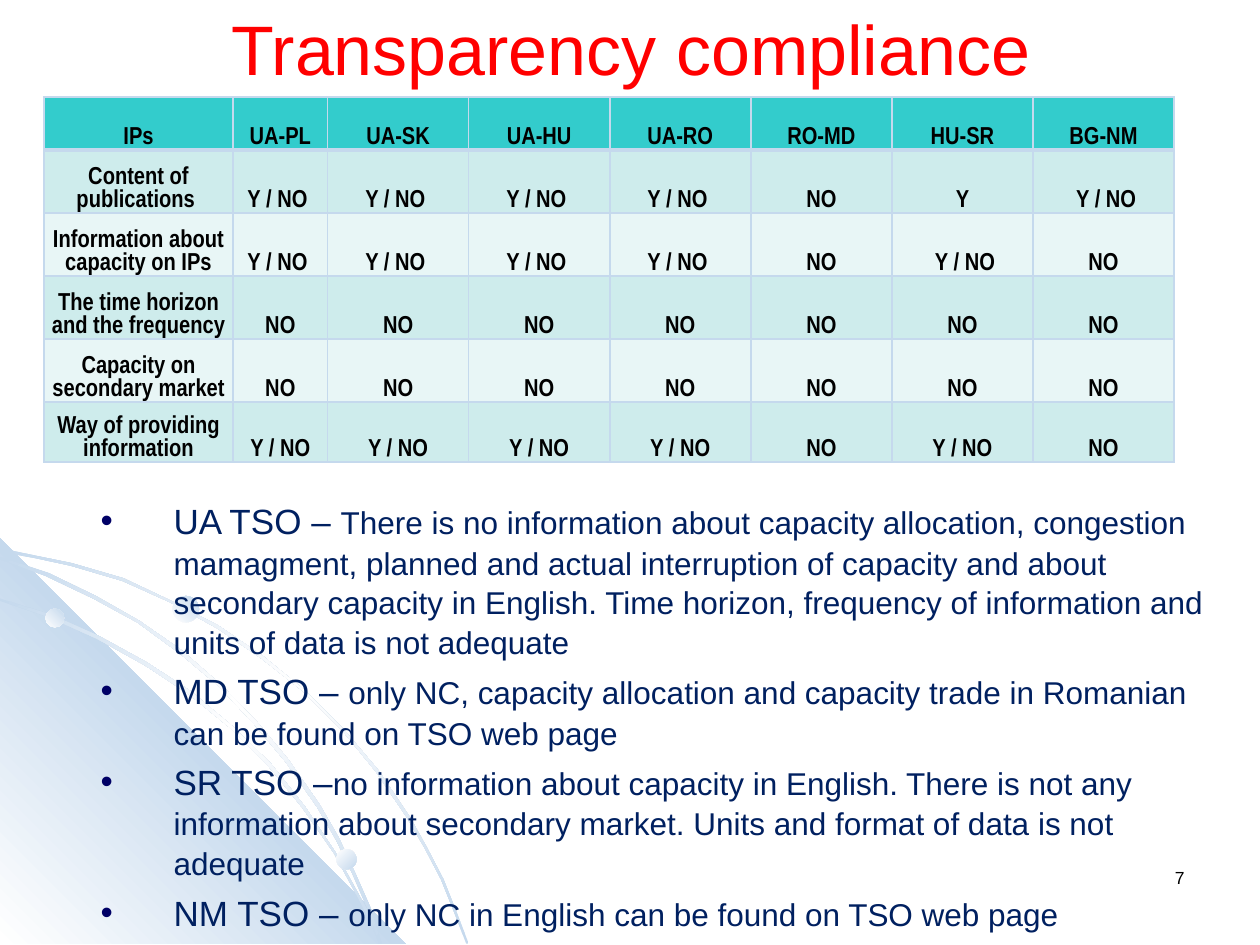
from dataclasses import dataclass

from lxml.etree import SubElement
from pptx import Presentation
from pptx.dml.color import RGBColor
from pptx.enum.shapes import MSO_SHAPE as Preset
from pptx.enum.text import MSO_ANCHOR as Anchor, PP_ALIGN as Align
from pptx.oxml.ns import qn
from pptx.util import Inches, Pt

COLORS = {
    "title": "FF0000", "text": "002060", "bullet": "000066", "black": "000000",
    "white": "FFFFFF", "mist": "C5D9ED", "header": "33CCCC",
    "odd": "CEECEC", "even": "E8F6F6",
}
SHEEN = ("mist", "white", "mist")
GLOW = ("white", "mist", "white")
PEARL = ("white", "mist")


@dataclass(frozen=True)
class Outline:
    points: tuple
    stops: tuple
    angle: int


@dataclass(frozen=True)
class Bead:
    left: float
    top: float
    size: float
    angle: int


@dataclass(frozen=True)
class Finding:
    operator: str
    remark: str


OUTLINES = [
    Outline((
        (0.57, 4.47), (0.28, 4.41), (0, 4.35), (0, 4.38), (0.28, 4.43), (0.56, 4.49),
        (0.97, 4.61), (1.35, 4.78), (1.73, 4.99), (2.08, 5.23), (2.41, 5.49), (2.71, 5.79),
        (2.98, 6.12), (3.23, 6.49), (3.37, 6.73), (3.5, 6.98), (3.6, 7.23), (3.7, 7.49),
        (3.72, 7.49), (3.62, 7.23), (3.52, 6.98), (3.39, 6.73), (3.25, 6.48), (3, 6.11),
        (2.72, 5.78), (2.42, 5.48), (2.09, 5.21), (1.74, 4.97), (1.36, 4.77), (0.98, 4.59),
    ), SHEEN, 45),
    Outline(((3.22, 7.49), (0, 7.49), (0, 4.27)), GLOW, 315),
    Outline((
        (2.85, 7.14), (2.94, 7.32), (3.01, 7.49), (3.03, 7.49), (2.96, 7.3), (2.86, 7.12),
        (2.66, 6.76), (2.42, 6.4), (2.15, 6.06), (1.84, 5.76), (1.52, 5.49), (1.17, 5.26),
        (0.79, 5.05), (0.41, 4.88), (0, 4.75), (0, 4.77), (0.39, 4.9), (0.77, 5.07),
        (1.15, 5.28), (1.5, 5.51), (1.83, 5.78), (2.13, 6.08), (2.4, 6.41), (2.65, 6.77),
    ), SHEEN, 45),
    Outline((
        (0, 4.42), (0, 4.44), (0.36, 4.57), (0.74, 4.75), (1.09, 4.94), (1.42, 5.18),
        (1.73, 5.44), (2.02, 5.75), (2.27, 6.05), (2.52, 6.41), (2.67, 6.67), (2.8, 6.94),
        (2.92, 7.22), (3.01, 7.49), (3.03, 7.49), (2.94, 7.2), (2.82, 6.93), (2.69, 6.65),
        (2.54, 6.39), (2.29, 6.03), (2.04, 5.73), (1.75, 5.43), (1.44, 5.16), (1.11, 4.93),
        (0.76, 4.73), (0.39, 4.55),
    ), SHEEN, 45),
]
BEADS = [Bead(0.36, 4.83, 0.15, 315), Bead(2.67, 6.74, 0.16, 45), Bead(1.37, 4.73, 0.21, 315)]

COLUMN_WIDTHS = [1.5, 0.75] + [1.12] * 6
ROW_HEIGHTS = [0.42] + [0.5] * 4 + [0.41]
PARTLY = "Y / NO "
COMPLIANCE = [
    ["IPs", "UA-PL", "UA-SK", "UA-HU", "UA-RO", "RO-MD", "HU-SR", "BG-NM"],
    ["Content of publications "] + [PARTLY] * 4 + ["NO", "Y", " Y / NO"],
    ["Information about capacity on IPs"] + [PARTLY] * 4 + ["NO", " Y / NO", "NO"],
    ["The time horizon and the frequency"] + ["NO"] * 7,
    ["Capacity on secondary market"] + ["NO"] * 7,
    ["Way of providing information"] + ["Y / NO"] * 4 + ["NO", "Y / NO", "NO"],
]
FINDINGS = [
    Finding("UA TSO – ", "There is no information about capacity allocation, congestion "
            "mamagment, planned and actual interruption of capacity and about secondary "
            "capacity in English. Time horizon, frequency of information and units of data "
            "is not adequate"),
    Finding("MD TSO – ", "only NC, capacity allocation and capacity trade in Romanian can be "
            "found on TSO web page"),
    Finding("SR TSO –", "no information about capacity in English. There is not any "
            "information about secondary market. Units and format of data is not adequate"),
    Finding("NM TSO – ", "only NC in English can be found on TSO web page"),
]


def add_span(para, text: str, size: int, color: str, font: str = "Arial", bold: bool = False) -> None:
    span = para.add_run()
    span.text = text
    span.font.name = font
    span.font.size = Pt(size)
    span.font.bold = bold
    span.font.color.rgb = RGBColor.from_string(COLORS[color])


def add_box(page, left: float, top: float, width: float, height: float, anchor=Anchor.TOP):
    box = page.shapes.add_textbox(Inches(left), Inches(top), Inches(width), Inches(height))
    box.text_frame.word_wrap = True
    box.text_frame.vertical_anchor = anchor
    return box.text_frame


def add_solid(parent, color: str) -> None:
    SubElement(SubElement(parent, qn("a:solidFill")), qn("a:srgbClr"), val=COLORS[color])


def paint_gradient(shape, stops: tuple, angle: int) -> None:
    shape.shadow.inherit = False
    shape.line.fill.background()
    shape.fill.gradient()
    gradient = shape.fill._xPr.find(qn("a:gradFill"))
    for child in list(gradient):
        gradient.remove(child)
    stop_list = SubElement(gradient, qn("a:gsLst"))
    for index, color in enumerate(stops):
        position = 100000 * index // (len(stops) - 1)
        stop = SubElement(stop_list, qn("a:gs"), pos=str(position))
        SubElement(stop, qn("a:srgbClr"), val=COLORS[color])
    SubElement(gradient, qn("a:lin"), ang=str(angle * 60000), scaled="0")


def draw_outline(page, outline: Outline) -> None:
    points = [(round(x * 100), round(y * 100)) for x, y in outline.points]
    builder = page.shapes.build_freeform(*points[0], scale=Inches(0.01))
    builder.add_line_segments(points[1:], close=True)
    paint_gradient(builder.convert_to_shape(), outline.stops, outline.angle)


def draw_bead(page, bead: Bead) -> None:
    size = Inches(bead.size)
    shape = page.shapes.add_shape(Preset.OVAL, Inches(bead.left), Inches(bead.top), size, size)
    paint_gradient(shape, PEARL, bead.angle)


def style_cell(cell, text: str, fill: str, top: int, bottom: int) -> None:
    cell.vertical_anchor = Anchor.BOTTOM
    cell.margin_left = cell.margin_right = cell.margin_top = Inches(0.01)
    cell.margin_bottom = Inches(0)
    para = cell.text_frame.paragraphs[0]
    para.alignment = Align.CENTER
    para.space_before = Pt(2.8)
    add_span(para, text, 14, "black", "Arial Narrow", True)
    properties = cell._tc.get_or_add_tcPr()
    for side, width in (("L", 1), ("R", 1), ("T", top), ("B", bottom)):
        border = SubElement(properties, qn(f"a:ln{side}"), w=str(Pt(width)))
        add_solid(border, "mist")
    add_solid(properties, fill)


def draw_table(page) -> None:
    frame = page.shapes.add_table(
        len(ROW_HEIGHTS), len(COLUMN_WIDTHS), Inches(0.35), Inches(0.77),
        Inches(sum(COLUMN_WIDTHS)), Inches(sum(ROW_HEIGHTS)))
    table = frame.table
    table.first_row = table.horz_banding = False
    for column, width in zip(table.columns, COLUMN_WIDTHS):
        column.width = Inches(width)
    for row, (height, texts) in enumerate(zip(ROW_HEIGHTS, COMPLIANCE)):
        table.rows[row].height = Inches(height)
        fill = "header" if row == 0 else ("even", "odd")[row % 2]
        for column, text in enumerate(texts):
            style_cell(table.cell(row, column), text, fill,
                       3 if row == 1 else 1, 3 if row == 0 else 1)


def draw_findings(page) -> None:
    frame = add_box(page, 0.2, 3.9, 9.53, 3.4)
    for index, finding in enumerate(FINDINGS):
        para = frame.add_paragraph() if index else frame.paragraphs[0]
        para.line_spacing = 1.05
        para.space_before = Pt(4 if index else 0)
        properties = para._p.get_or_add_pPr()
        properties.set("marL", str(Inches(1.08)))
        properties.set("indent", str(Inches(-0.58)))
        bullet_color = SubElement(properties, qn("a:buClr"))
        SubElement(bullet_color, qn("a:srgbClr"), val=COLORS["bullet"])
        SubElement(properties, qn("a:buFont"), typeface="Arial")
        SubElement(properties, qn("a:buChar"), char="•")
        add_span(para, finding.operator, 20, "text")
        add_span(para, finding.remark, 18, "text")


def draw_line(page, text: str, size: int, color: str, align, place: tuple, anchor) -> None:
    para = add_box(page, *place, anchor).paragraphs[0]
    para.alignment = align
    add_span(para, text, size, color)


def main() -> None:
    deck = Presentation()
    deck.slide_width, deck.slide_height = Inches(10), Inches(7.5)
    page = deck.slides.add_slide(deck.slide_layouts[6])
    for outline in OUTLINES:
        draw_outline(page, outline)
    for bead in BEADS:
        draw_bead(page, bead)
    draw_line(page, "7", 10, "black", Align.RIGHT, (7.17, 6.83, 2.33, 0.5), Anchor.TOP)
    draw_line(page, "Transparency compliance", 40, "title", Align.CENTER,
              (0.28, 0, 9.45, 0.76), Anchor.MIDDLE)
    draw_findings(page)
    draw_table(page)
    deck.save("out.pptx")


if __name__ == "__main__":
    main()
